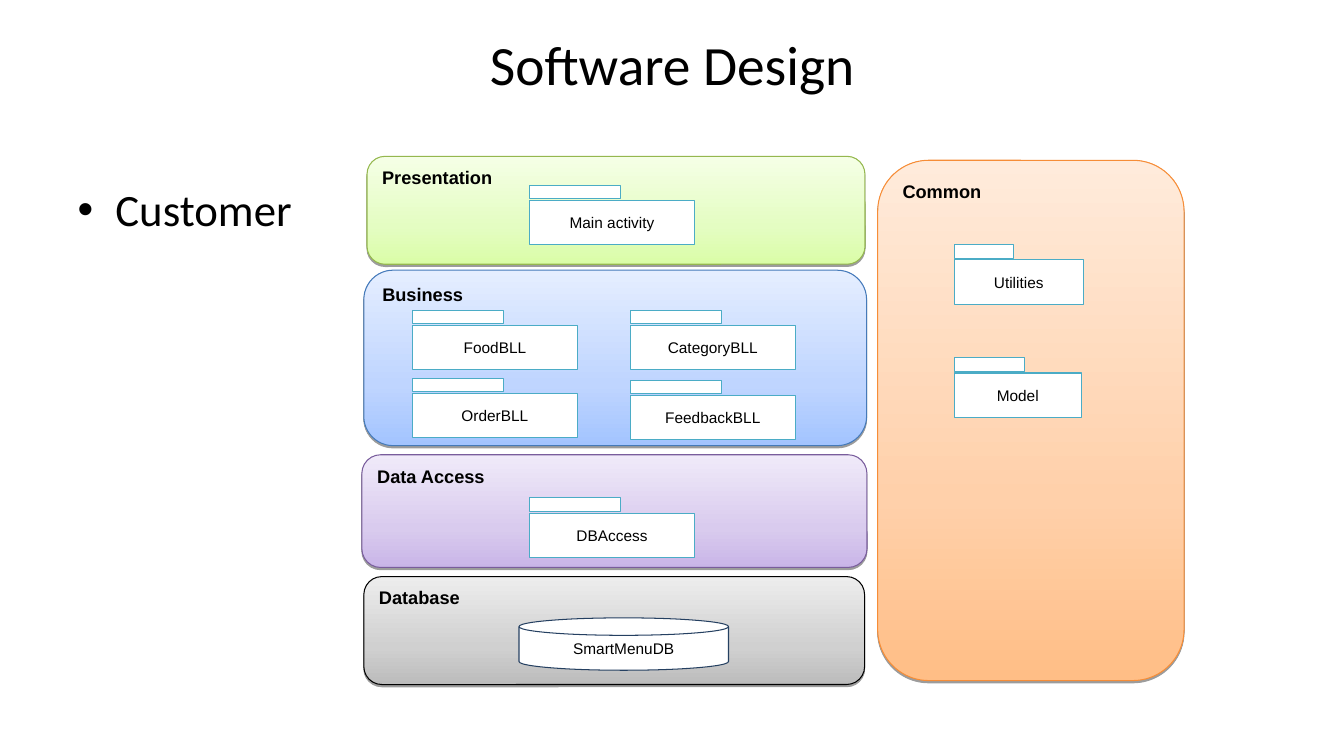
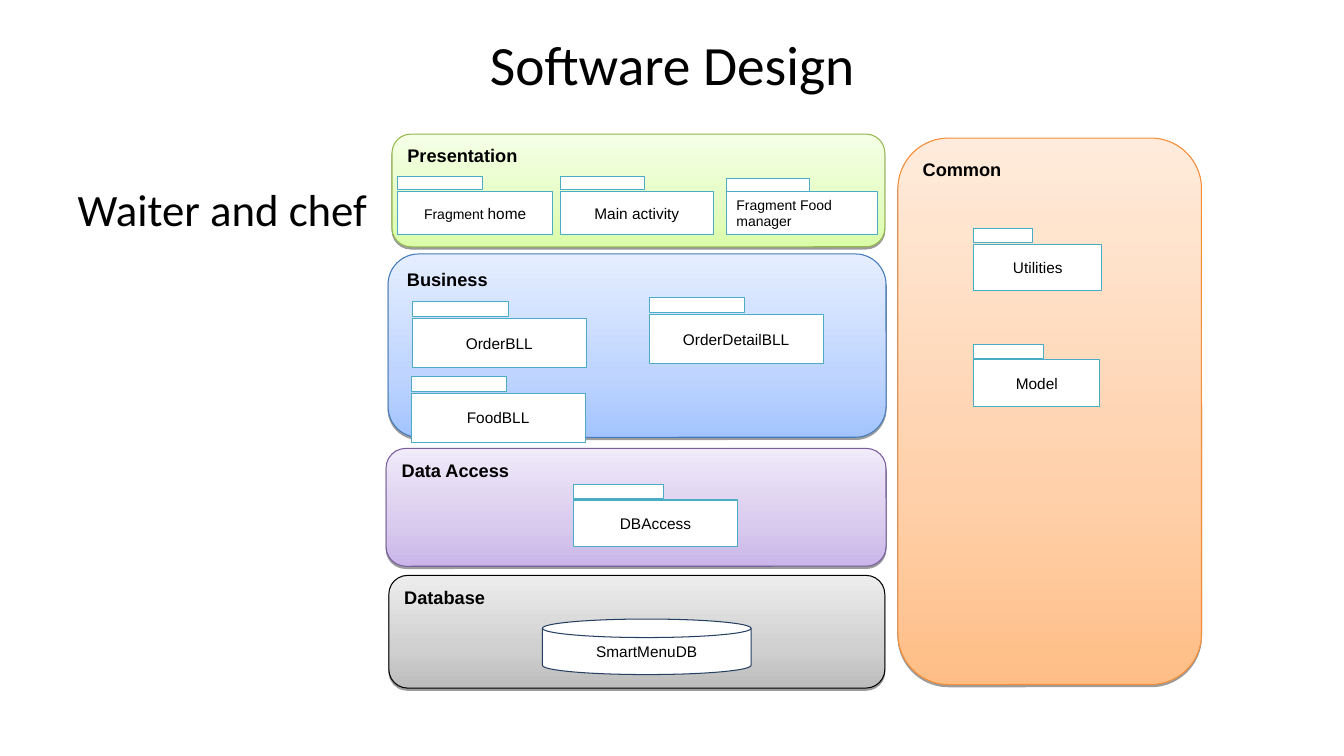
from copy import deepcopy
from dataclasses import dataclass

from lxml import etree
from pptx import Presentation
from pptx.dml.color import RGBColor
from pptx.enum import shapes, text
from pptx.oxml import ns
from pptx.util import Cm, Pt

BLACK = RGBColor(0x00, 0x00, 0x00)
WHITE = RGBColor(0xFF, 0xFF, 0xFF)
TEAL = RGBColor(0x4B, 0xAC, 0xC6)
NAVY = RGBColor(0x25, 0x40, 0x61)

GRADIENT_POSITIONS = (0, 0.35, 1)
SHAPE = shapes.MSO_SHAPE
ALIGN = text.PP_ALIGN
ANCHOR = text.MSO_ANCHOR


@dataclass(frozen=True)
class Box:
    """A rectangle in centimetres."""
    left: float
    top: float
    width: float
    height: float

    def lengths(self):
        return Cm(self.left), Cm(self.top), Cm(self.width), Cm(self.height)


@dataclass(frozen=True)
class Palette:
    line: RGBColor
    stops: tuple[RGBColor, RGBColor, RGBColor]  # from bottom to top


@dataclass(frozen=True)
class Package:
    """A package symbol: a body with a smaller tab above its left edge."""
    spans: tuple[tuple[str, float], ...]  # wording and point size
    box: Box
    tab_width: float = 0.55  # shares of the body's width and height
    tab_height: float = 0.3
    tab_rise: float = 0.34
    align: ALIGN = ALIGN.CENTER


@dataclass(frozen=True)
class Design:
    heading: str
    bulleted: bool
    layers: dict[str, Box]
    database: Box
    packages: tuple[Package, ...]


def palette(line: str, *stops: str) -> Palette:
    return Palette(RGBColor.from_string(line), tuple(map(RGBColor.from_string, stops)))


PALETTES = {
    "Data Access": palette("795D9C", "C9B5E8", "D9CBEE", "F0EAF9"),
    "Database": palette("000000", "BCBCBC", "D0D0D0", "EDEDED"),
    "Presentation": palette("95B74F", "DAFDA7", "E4FDC2", "F5FFE6"),
    "Common": palette("F68D37", "FFBE86", "FFD0AA", "FFEBDB"),
    "Business": palette("457AB9", "A3C4FF", "BFD5FF", "E5EEFF"),
}

TITLE_BOX = Box(1.7, 0.76, 30.48, 3.18)
BODY_BOX = Box(1.7, 4.45, 30.48, 12.57)


def package(label: str, left: float, top: float, width: float = 4.17,
            height: float = 1.12, **options) -> Package:
    return Package(((label, 11),), Box(left, top, width, height), **options)


CUSTOMER = Design(
    heading="Customer",
    bulleted=True,
    layers={
        "Data Access": Box(9.12, 11.46, 12.73, 2.84),
        "Database": Box(9.17, 14.53, 12.62, 2.72),
        "Presentation": Box(9.25, 3.94, 12.55, 2.72),
        "Common": Box(22.12, 4.04, 7.72, 13.11),
        "Business": Box(9.17, 6.81, 12.67, 4.42),
    },
    database=Box(13.08, 15.57, 5.28, 1.32),
    packages=(
        package("DBAccess", 13.34, 12.93),
        package("Utilities", 24.05, 6.55, 3.25, tab_width=0.46),
        package("Model", 24.05, 9.4, 3.2),
        package("Main activity", 13.34, 5.05),
        package("OrderBLL", 10.39, 9.91),
        package("FeedbackBLL", 15.88, 9.96),
        package("FoodBLL", 10.39, 8.2),
        package("CategoryBLL", 15.88, 8.2),
    ),
)

STAFF = Design(
    heading="Waiter and chef",
    bulleted=False,
    layers={
        "Data Access": Box(9.73, 11.3, 12.6, 2.97),
        "Database": Box(9.8, 14.5, 12.5, 2.84),
        "Presentation": Box(9.88, 3.38, 12.42, 2.84),
        "Common": Box(22.63, 3.48, 7.65, 13.77),
        "Business": Box(9.78, 6.4, 12.55, 4.62),
    },
    database=Box(13.67, 15.6, 5.26, 1.4),
    packages=(
        package("DBAccess", 14.45, 12.6, 4.14, 1.17),
        package("Utilities", 24.54, 6.15, 3.23, 1.17, tab_width=0.46),
        package("Model", 24.54, 9.07, 3.18, 1.17),
        package("Main activity", 14.12, 4.83, 3.86, 1.09),
        Package((("Fragment Food manager", 10),), Box(18.31, 4.83, 3.81, 1.07),
                tab_rise=0.31, align=ALIGN.LEFT),
        Package((("Fragment ", 10), ("home", 11)), Box(10.03, 4.83, 3.89, 1.09)),
        package("OrderBLL", 10.39, 8.03, 4.39, 1.24),
        package("FoodBLL", 10.36, 9.91, 4.39, 1.24),
        package("OrderDetailBLL", 16.36, 7.92, 4.39, 1.24),
    ),
)


def write(para, wording: str, *, size: float, font: str = "Arial",
          bold: bool = False, align: ALIGN = ALIGN.LEFT) -> None:
    """Add one formatted span to a paragraph."""
    para.alignment = align
    span = para.add_run()
    span.text = wording
    span.font.name = font
    span.font.size = Pt(size)
    span.font.bold = bold
    span.font.color.rgb = BLACK


def add_outline(page, kind: SHAPE, box: Box, line: RGBColor):
    """Add a white shape with a thin line and no shadow."""
    shape = page.shapes.add_shape(kind, *box.lengths())
    shape.shadow.inherit = False
    shape.fill.solid()
    shape.fill.fore_color.rgb = WHITE
    shape.line.color.rgb = line
    shape.line.width = Pt(0.75)
    shape.text_frame.word_wrap = True
    shape.text_frame.vertical_anchor = ANCHOR.MIDDLE
    return shape


def fill_gradient(shape, colours: tuple[RGBColor, ...]) -> None:
    shape.fill.gradient()
    shape.fill.gradient_angle = 90
    stop_list = shape._element.spPr.find(".//" + ns.qn("a:gsLst"))
    stop_list.append(deepcopy(stop_list[-1]))
    for stop, position, colour in zip(shape.fill.gradient_stops, GRADIENT_POSITIONS, colours):
        stop.position = position
        stop.color.rgb = colour


def drop_shadow(shape) -> None:
    effects = shape._element.spPr.find(ns.qn("a:effectLst"))
    shadow = etree.SubElement(effects, ns.qn("a:outerShdw"), blurRad="0",
                              dist=str(Pt(1.6)), dir="5400000", rotWithShape="0")
    colour = etree.SubElement(shadow, ns.qn("a:srgbClr"), val=str(BLACK))
    etree.SubElement(colour, ns.qn("a:alpha"), val="38000")


def draw_layer(page, name: str, box: Box) -> None:
    colours = PALETTES[name]
    shape = add_outline(page, SHAPE.ROUNDED_RECTANGLE, box, colours.line)
    fill_gradient(shape, colours.stops)
    drop_shadow(shape)
    shape.text_frame.vertical_anchor = ANCHOR.TOP
    write(shape.text_frame.paragraphs[0], name, size=13, bold=True)


def draw_package(page, item: Package) -> None:
    box = item.box
    body = add_outline(page, SHAPE.RECTANGLE, box, TEAL)
    for wording, size in item.spans:
        write(body.text_frame.paragraphs[0], wording, size=size, align=item.align)
    tab = Box(box.left, box.top - item.tab_rise * box.height,
              item.tab_width * box.width, item.tab_height * box.height)
    add_outline(page, SHAPE.RECTANGLE, tab, TEAL)


def draw_database(page, box: Box) -> None:
    disk = add_outline(page, SHAPE.FLOWCHART_MAGNETIC_DISK, box, NAVY)
    write(disk.text_frame.paragraphs[0], "SmartMenuDB", size=11, align=ALIGN.CENTER)


def place(holder, box: Box) -> None:
    holder.left, holder.top, holder.width, holder.height = box.lengths()


def fill_placeholders(page, design: Design) -> None:
    title, body = page.shapes.title, page.placeholders[1]
    place(title, TITLE_BOX)
    title.text_frame.vertical_anchor = ANCHOR.TOP
    title.text_frame.margin_top = 0
    write(title.text_frame.paragraphs[0], "Software Design", size=39.6,
          font="Calibri", align=ALIGN.CENTER)

    place(body, BODY_BOX)
    para = body.text_frame.paragraphs[0]
    write(para, design.heading, size=32, font="Calibri")
    if not design.bulleted:
        properties = para._p.get_or_add_pPr()
        properties.set("marL", "0")
        properties.set("indent", "0")
        etree.SubElement(properties, ns.qn("a:buNone"))


def add_design_page(deck, design: Design) -> None:
    page = deck.slides.add_slide(deck.slide_layouts[1])
    fill_placeholders(page, design)
    # Layers lie behind the database and the packages
    for name, box in design.layers.items():
        draw_layer(page, name, box)
    draw_database(page, design.database)
    for item in design.packages:
        draw_package(page, item)


def main() -> None:
    deck = Presentation()
    deck.slide_width, deck.slide_height = Cm(33.87), Cm(19.05)
    for design in (CUSTOMER, STAFF):
        add_design_page(deck, design)
    deck.save("out.pptx")


if __name__ == "__main__":
    main()
